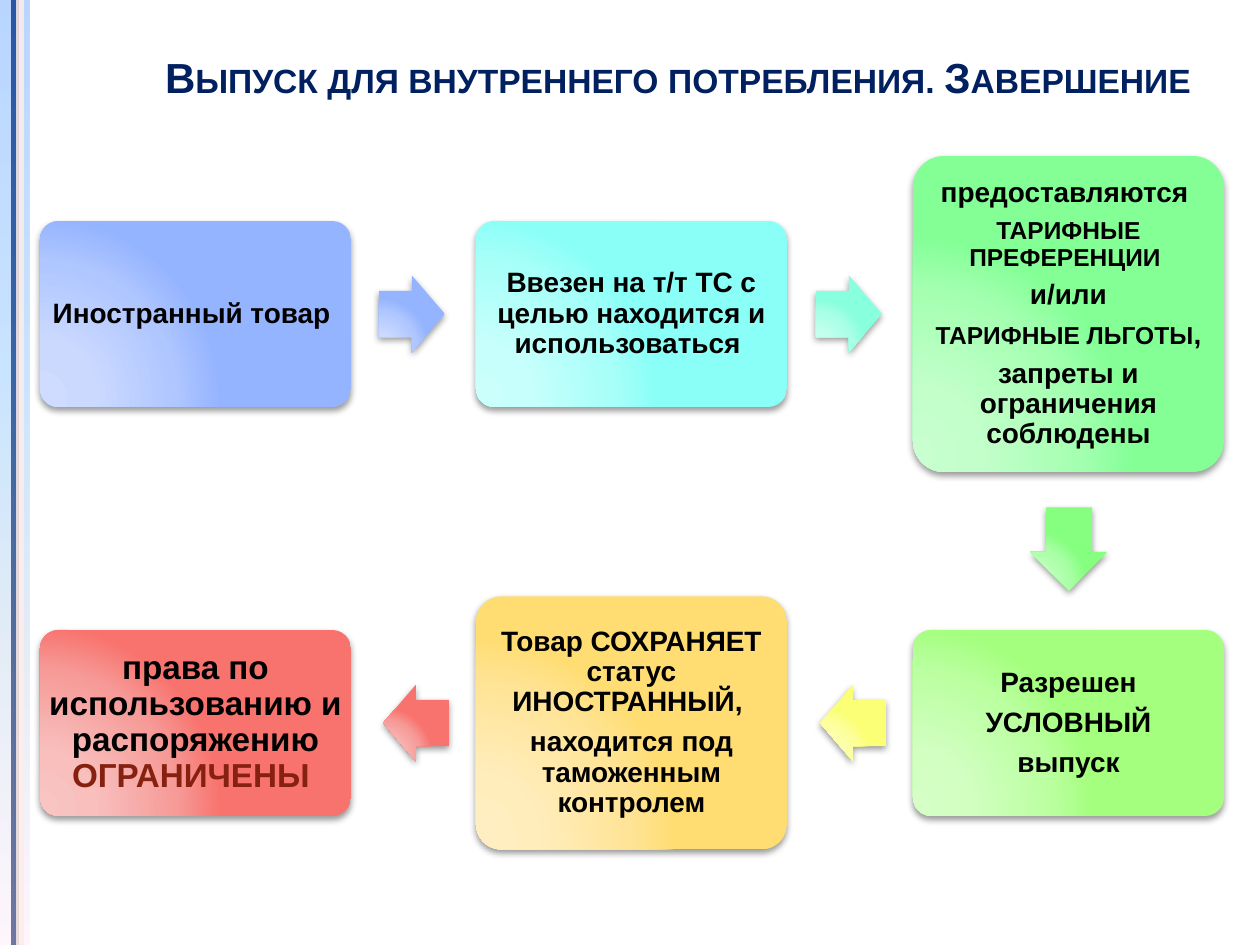
import pptx
import pptx.util
import pptx.dml.color
import pptx.enum.shapes
import pptx.enum.text
import pptx.oxml
from lxml import etree

SHAPES = pptx.enum.shapes.MSO_SHAPE
NS = 'xmlns:a="http://schemas.openxmlformats.org/drawingml/2006/main"'
FONT = "Arial"
PX = 914400 // 126

COLORS = {"navy": "002060", "black": "000000", "maroon": "862110", "cream": "FFEDE8"}
GRADIENTS = {
    "side": ("5E9EFF", "85C2FF", "C4D6EB", "FFEBFA"),
    "blue": ("CFDCFF", "CBD9FF", "AFC6FF", "95B4FF"),
    "cyan": ("CBFFFB", "C6FFFB", "A8FFF9", "8AFFF7"),
    "aqua": ("CAFFEF", "C5FFED", "A7FFE5", "88FFDD"),
    "mint": ("C9FFD0", "C3FFCB", "A4FFB1", "83FF96"),
    "green": ("CAFFC8", "C5FFC3", "A6FFA2", "86FF80"),
    "lime": ("D6FFC7", "D2FFC2", "BBFFA1", "A4FF7E"),
    "yellow": ("FDFFC3", "FDFFBD", "FCFF9A", "FBFF75"),
    "amber": ("FFEEC2", "FFEDBC", "FFE498", "FFDD72"),
    "red": ("F8C5C3", "F8BFBD", "F69B98", "F8736E"),
}
CORNER_GLOW = '<a:path path="circle"><a:fillToRect l="5000" t="100000" r="120000" b="10000"/></a:path>'
DOWNWARD = '<a:lin ang="5400000" scaled="0"/>'

TITLE = "Выпуск для внутреннего потребления. Завершение"
COLUMNS = (40, 476, 913)
ROWS = (314, 723)
STEP_WIDTH = 311

# column, row, height, gradient, paragraphs of (text, size, color)
STEPS = [
    (0, 0, 186, "blue", [[("Иностранный товар ", 16, "black")]]),
    (1, 0, 186, "cyan", [[("Ввезен на т/т ТС с целью находится и использоваться ", 16, "black")]]),
    (2, 0, 316, "mint", [
        [("предоставляются ", 16, "black")],
        [("ТАРИФНЫЕ ПРЕФЕРЕНЦИИ ", 14, "black")],
        [("и/или", 16, "black")],
        [("ТАРИФНЫЕ ЛЬГОТЫ", 14, "black"), (",", 16, "black")],
        [("запреты и ограничения соблюдены", 16, "black")],
    ]),
    (2, 1, 186, "lime", [
        [("Разрешен", 16, "black")],
        [("УСЛОВНЫЙ", 16, "black")],
        [("выпуск", 16, "black")],
    ]),
    (1, 1, 253, "amber", [
        [("Товар СОХРАНЯЕТ статус ИНОСТРАННЫЙ, ", 16, "black")],
        [("находится под таможенным контролем", 16, "black")],
    ]),
    (0, 1, 186, "red", [
        [("права по использованию и распоряжению ", 19, "black"), ("ОГРАНИЧЕНЫ ", 19, "maroon")],
    ]),
]

# center x, center y, length, rotation, gradient
ARROWS = [
    (412, ROWS[0], 66, 0, "blue"),
    (849, ROWS[0], 66, 0, "aqua"),
    (1069, 549, 83, 90, "green"),
    (853, ROWS[1], 66, 180, "yellow"),
    (416, ROWS[1], 66, 180, "red"),
]
ARROW_BREADTH = 77


def px(*lengths):
    return [pptx.util.Emu(round(length * PX)) for length in lengths]


def rgb(name):
    return pptx.dml.color.RGBColor.from_string(COLORS[name])


def set_gradient(shape, name, positions, direction, alpha=100):
    stops = "".join(
        f'<a:gs pos="{position * 1000}"><a:srgbClr val="{color}">'
        f'<a:alpha val="{alpha * 1000}"/></a:srgbClr></a:gs>'
        for position, color in zip(positions, GRADIENTS[name]))
    shape.fill.background()
    empty = shape._element.spPr.find(pptx.oxml.ns.qn("a:noFill"))
    gradient = pptx.oxml.parse_xml(
        f'<a:gradFill {NS} rotWithShape="1"><a:gsLst>{stops}</a:gsLst>{direction}</a:gradFill>')
    shape._element.spPr.replace(empty, gradient)


def add_part(slide, preset, center_x, center_y, width, height, gradient):
    part = slide.shapes.add_shape(
        preset, *px(center_x - width / 2, center_y - height / 2, width, height))
    part.line.fill.background()
    set_gradient(part, gradient, (0, 30, 75, 100), CORNER_GLOW)
    part.shadow.inherit = False
    part._element.spPr.find(pptx.oxml.ns.qn("a:effectLst")).append(pptx.oxml.parse_xml(
        f'<a:outerShdw {NS} blurRad="50800" dist="25400" dir="5400000" rotWithShape="0">'
        '<a:srgbClr val="000000"><a:alpha val="40000"/></a:srgbClr></a:outerShdw>'))
    return part


def add_run(paragraph, text, size, color):
    run = paragraph.add_run()
    run.text = text
    run.font.name = FONT
    run.font.size = pptx.util.Pt(size)
    run.font.bold = True
    run.font.color.rgb = rgb(color)
    return run


def add_step(slide, column, row, height, gradient, paragraphs):
    step = add_part(slide, SHAPES.ROUNDED_RECTANGLE, COLUMNS[column] + STEP_WIDTH / 2,
                    ROWS[row], STEP_WIDTH, height, gradient)
    step.adjustments[0] = 0.1
    frame = step.text_frame
    frame.word_wrap = True
    frame.vertical_anchor = pptx.enum.text.MSO_ANCHOR.MIDDLE
    corner_inset = 0.029 * min(height, STEP_WIDTH)
    margin = px(max(0, 9 - corner_inset))[0]
    frame.margin_left = frame.margin_right = frame.margin_top = frame.margin_bottom = margin
    for index, runs in enumerate(paragraphs):
        paragraph = frame.add_paragraph() if index else frame.paragraphs[0]
        paragraph.alignment = pptx.enum.text.PP_ALIGN.CENTER
        paragraph.line_spacing = 0.9
        paragraph.space_after = pptx.util.Pt(0.35 * runs[0][1])
        for text, size, color in runs:
            add_run(paragraph, text, size, color)


def add_stripe(slide, x, color, alpha=100):
    stripe = slide.shapes.add_connector(
        pptx.enum.shapes.MSO_CONNECTOR.STRAIGHT, *px(x, 0, x, 945))
    stripe.line.width = pptx.util.Pt(4.5)
    stripe.line.color.rgb = rgb(color)
    tint = stripe._element.spPr.find(".//" + pptx.oxml.ns.qn("a:srgbClr"))
    etree.SubElement(tint, pptx.oxml.ns.qn("a:alpha")).set("val", str(alpha * 1000))
    etree.SubElement(stripe._element.spPr, pptx.oxml.ns.qn("a:effectLst"))


def add_side_band(slide):
    add_stripe(slide, 15, "navy")
    band = slide.shapes.add_shape(SHAPES.RECTANGLE, *px(0, 0, 29, 945))
    band.line.fill.background()
    band.shadow.inherit = False
    set_gradient(band, "side", (0, 40, 70, 100), DOWNWARD, alpha=43)
    add_stripe(slide, 20, "cream", alpha=83)


def add_title(slide):
    title = slide.shapes.add_textbox(*px(137, 0, 1082, 108))
    frame = title.text_frame
    frame.word_wrap = True
    frame.vertical_anchor = pptx.enum.text.MSO_ANCHOR.BOTTOM
    frame.paragraphs[0].alignment = pptx.enum.text.PP_ALIGN.CENTER
    run = add_run(frame.paragraphs[0], TITLE, 24, "navy")
    run.font._element.set("cap", "small")


def main():
    deck = pptx.Presentation()
    deck.slide_width, deck.slide_height = px(1260, 945)
    slide = deck.slides.add_slide(deck.slide_layouts[6])
    add_side_band(slide)
    add_title(slide)
    for step in STEPS:
        add_step(slide, *step)
    for x, y, length, rotation, gradient in ARROWS:
        arrow = add_part(slide, SHAPES.RIGHT_ARROW, x, y, length, ARROW_BREADTH, gradient)
        arrow.adjustments[0] = 0.6
        arrow.adjustments[1] = 0.5
        arrow.rotation = rotation
    deck.save("out.pptx")


if __name__ == "__main__":
    main()
